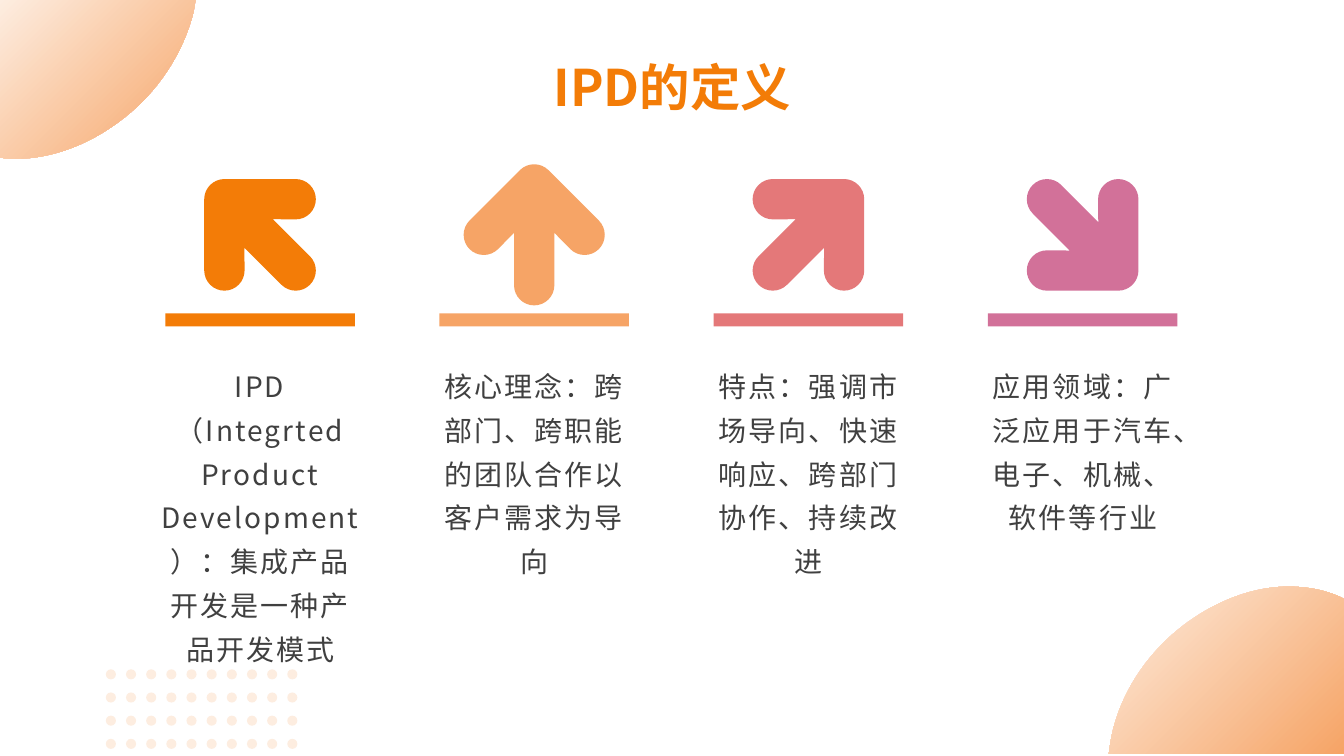
"""Build a slide that defines IPD in four arrow-topped columns."""
import math
import pptx
import pptx.util
import pptx.dml.color
import pptx.enum.shapes
import pptx.enum.text
import pptx.oxml.ns
import lxml.etree

PX = 9144
THEME = {
    "font": "Noto Sans CJK SC", "title": 36, "body": 20,
    "ink": "404040", "pale": "FDEDE0", "deep": "F37C07", "soft": "F6A466",
    "rose": "E47879", "plum": "D27199",
}
COLUMNS = [
    ("deep", -45, "IPD（Integrted Product Development）：集成产品开发是一种产品开发模式"),
    ("soft", 0, "核心理念：跨部门、跨职能的团队合作以客户需求为导向"),
    ("rose", 45, "特点：强调市场导向、快速响应、跨部门协作、持续改进"),
    ("plum", 135, "应用领域：广泛应用于汽车、电子、机械、软件等行业"),
]
CORNERS = [
    [(0, 0), (194, 0), (192, 12), (184, 44, 166, 77, 138, 104),
     (98, 142, 48, 161, 4, 157), (0, 156)],
    [(1278, 582), (1296, 582, 1313, 585, 1329, 592), (1333, 594), (1333, 748),
     (1100, 748), (1101, 741), (1106, 704, 1125, 666, 1157, 635),
     (1193, 601, 1238, 582, 1278, 582)],
]
CAPS = [(0, -50, (-135, -90, -45)), (50, 0, (-45, 0, 90, 135)), (20, -2, ()),
        (0, 50, (0, 90, 180)), (-20, -2, ()), (-50, 0, (45, 90, 180, 225))]
RADIUS = 20
SHAPE = pptx.enum.shapes.MSO_SHAPE
qn = pptx.oxml.ns.qn


def tint(fill, *names, angle=0):
    """Fill with one theme colour, or with a gradient between two."""
    if len(names) == 1:
        fill.solid()
        fill.fore_color.rgb = pptx.dml.color.RGBColor.from_string(THEME[names[0]])
        return
    fill.gradient()
    fill.gradient_angle = angle
    for stop, name in zip(fill.gradient_stops, names):
        stop.color.rgb = pptx.dml.color.RGBColor.from_string(THEME[name])


def draw(steps, left=0, top=0):
    """Draw a closed outline of lines (x, y) and curves (three points)."""
    steps = [[round((n + (top if i % 2 else left)) * PX) for i, n in enumerate(step)]
             for step in steps]
    pen = slide.shapes.build_freeform(*steps[0], scale=1.0)
    pen.add_line_segments([step[-2:] for step in steps[1:]])
    shape = pen.convert_to_shape()
    lines = list(shape.element.iter(qn("a:lnTo")))
    for line, step in zip(lines, steps[1:]):
        if len(step) == 6:
            curve = lxml.etree.Element(qn("a:cubicBezTo"))
            for x, y in zip(step[::2], step[1::2]):
                lxml.etree.SubElement(
                    curve, qn("a:pt"), x=str(x - shape.left), y=str(y - shape.top))
            line.getparent().replace(line, curve)
    shape.shadow.inherit = False
    shape.line.fill.background()
    return shape


deck = pptx.Presentation()
deck.slide_width, deck.slide_height = 12192000, 750 * PX
slide = deck.slides.add_slide(deck.slide_layouts[5])
shapes = slide.shapes
texts = []

decor = []
for corner in CORNERS:
    blob = draw(corner)
    tint(blob.fill, "pale", "soft", angle=315)
    decor.append(blob)
for col in range(10):
    for row in range(4):
        dot = shapes.add_shape(
            SHAPE.OVAL, *[n * PX for n in (105 + 20 * col, 664 + 23 * row, 10, 10)])
        dot.rotation = 90
        dot.shadow.inherit = False
        dot.line.fill.background()
        tint(dot.fill, "pale")
        decor.append(dot)
for i, part in enumerate(decor):
    part.element.nvSpPr.cNvPr.set("id", str(100 + i))
    slide.slide_layout.shapes.element.append(part.element)

title = shapes.title
title.left, title.top, title.width, title.height = [n * PX for n in (67, 50, 1200, 71)]
title.text_frame.text = "IPD的定义"
title.text_frame.vertical_anchor = pptx.enum.text.MSO_ANCHOR.MIDDLE
head = title.text_frame.paragraphs[0]
head.alignment = pptx.enum.text.PP_ALIGN.CENTER
head.runs[0].font.bold = True
tint(head.runs[0].font.fill, "deep", "soft", angle=180)
texts.append((head.runs[0], "title"))

outline = []
for x, y, turns in CAPS:
    if not turns:
        outline.append((x, y))
        continue
    spots = [(math.cos(math.radians(t)), math.sin(math.radians(t))) for t in turns]
    outline.append((x + RADIUS * spots[0][0], y + RADIUS * spots[0][1]))
    for i in range(len(turns) - 1):
        (ax, ay), (bx, by) = spots[i:i + 2]
        pull = 4 / 3 * math.tan(math.radians(turns[i + 1] - turns[i]) / 4)
        outline.append((
            x + RADIUS * (ax - pull * ay), y + RADIUS * (ay + pull * ax),
            x + RADIUS * (bx + pull * by), y + RADIUS * (by - pull * bx),
            x + RADIUS * bx, y + RADIUS * by))

for i, (color, angle, text) in enumerate(COLUMNS):
    mid = 258 + 272 * i

    arrow = draw(outline, mid, 233)
    arrow.rotation = angle
    tint(arrow.fill, color)

    box = shapes.add_textbox(*[n * PX for n in (mid - 108, 352, 217, 331)])
    box.text_frame.word_wrap = True
    box.text_frame.text = text
    para = box.text_frame.paragraphs[0]
    para.alignment = pptx.enum.text.PP_ALIGN.CENTER
    para.line_spacing = 1.3
    tint(para.runs[0].font.fill, "ink")
    para.runs[0].font._element.set("spc", "150")
    texts.append((para.runs[0], "body"))

    bar = shapes.add_shape(SHAPE.RECTANGLE, *[n * PX for n in (mid - 94, 311, 188, 13)])
    bar.shadow.inherit = False
    bar.line.fill.background()
    tint(bar.fill, color)

for run, size in texts:
    run.font.name = THEME["font"]
    run.font.size = pptx.util.Pt(THEME[size])
    props = run.font._element
    props.set("lang", "zh-CN")
    east = lxml.etree.Element(qn("a:ea"), typeface=THEME["font"])
    props.find(qn("a:latin")).addnext(east)

deck.save("out.pptx")
